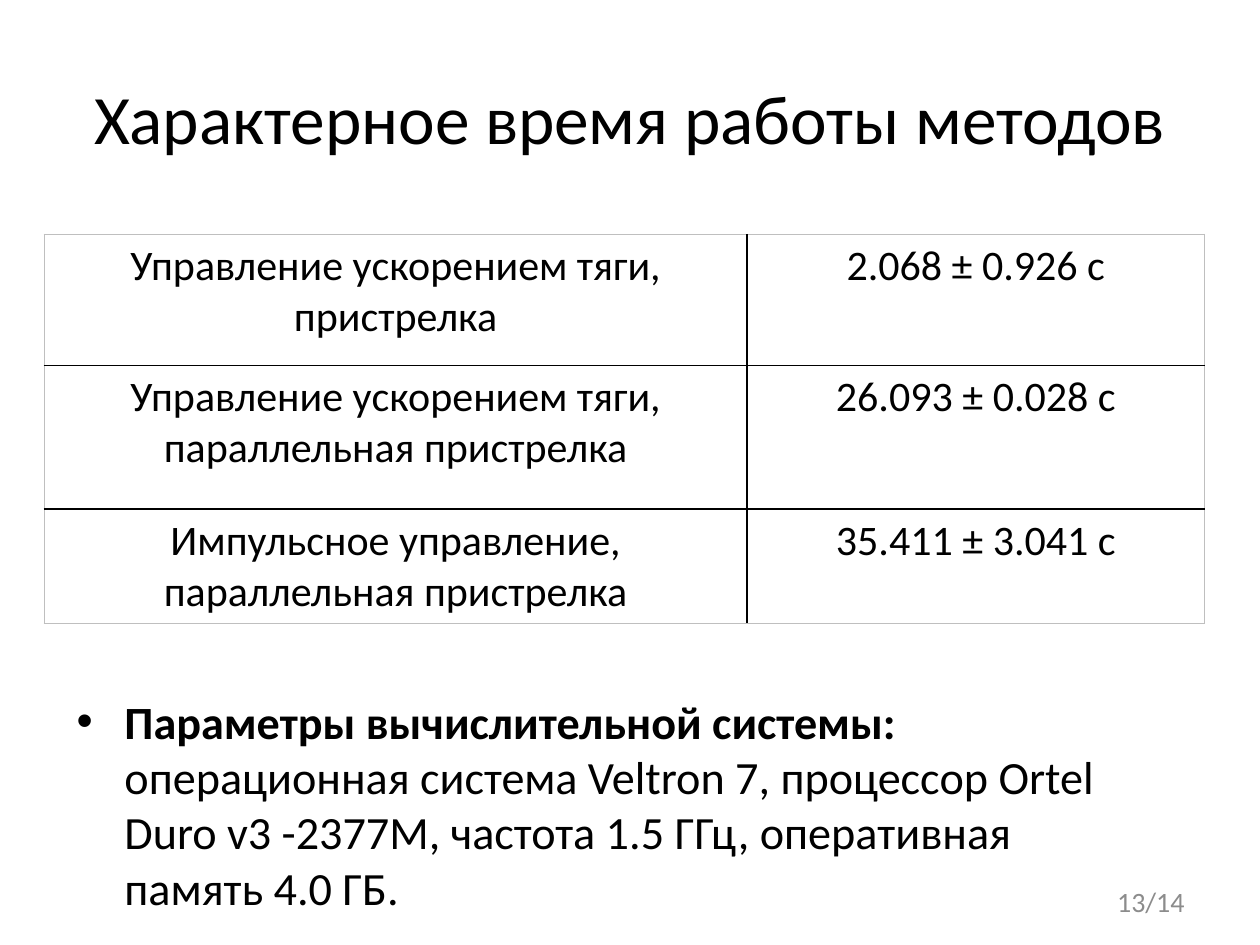
from lxml import etree
from pptx import Presentation
from pptx.dml.color import RGBColor
from pptx.enum.text import MSO_ANCHOR, PP_ALIGN
from pptx.oxml.ns import qn
from pptx.util import Inches, Pt

BLACK = RGBColor(0x00, 0x00, 0x00)
GRAY = RGBColor(0x8C, 0x8C, 0x8C)
LIGHT_GRAY = RGBColor(0xBF, 0xBF, 0xBF)
LEFT, CENTER, RIGHT = PP_ALIGN.LEFT, PP_ALIGN.CENTER, PP_ALIGN.RIGHT
TOP, MIDDLE = MSO_ANCHOR.TOP, MSO_ANCHOR.MIDDLE

TITLE = "Характерное время работы методов"
TIMINGS = [
    ("Управление ускорением тяги, пристрелка", "2.068 ± 0.926 с"),
    ("Управление ускорением тяги, параллельная пристрелка", "26.093 ± 0.028 с"),
    ("Импульсное управление, параллельная пристрелка", "35.411 ± 3.041 с"),
]
COLUMN_WIDTHS = (5.58, 3.63)
ROW_HEIGHTS = (1.04, 1.14, 0.91)
SYSTEM_LABEL = "Параметры вычислительной системы: "
SYSTEM_DETAILS = (
    "операционная система Veltron 7, процессор Ortel Duro v3 -2377M, "
    "частота 1.5 ГГц, оперативная память 4.0 ГБ."
)
PAGE_NUMBER = "13/14"


def add_run(paragraph, text, size, color=BLACK, bold=False):
    """Append a formatted run to a paragraph."""
    run = paragraph.add_run()
    run.text = text
    formats = {"name": "Calibri", "size": Pt(size), "bold": bold}
    for name, value in formats.items():
        setattr(run.font, name, value)
    run.font.color.rgb = color


def add_text_box(slide, box, alignment, anchor):
    """Add a wrapping text box and return its first paragraph."""
    frame = slide.shapes.add_textbox(*map(Inches, box)).text_frame
    for name, value in {"word_wrap": True, "vertical_anchor": anchor}.items():
        setattr(frame, name, value)
    paragraph = frame.paragraphs[0]
    paragraph.alignment = alignment
    return paragraph


def add_title(slide, box):
    """Place the centred slide title."""
    add_run(add_text_box(slide, box, CENTER, MIDDLE), TITLE, 39.6)


def set_borders(cell, borders):
    """Draw cell borders from a dict of side to colour and width."""
    properties = cell._tc.get_or_add_tcPr()
    for index, (side, (color, width)) in enumerate(borders.items()):
        line = etree.Element(qn(f"a:ln{side}"), w=str(Pt(width)))
        fill = etree.SubElement(line, qn("a:solidFill"))
        etree.SubElement(fill, qn("a:srgbClr"), val=str(color))
        properties.insert(index, line)


def add_timing_table(slide, box):
    """Place the table of methods and their running times."""
    row_count, column_count = len(TIMINGS), len(COLUMN_WIDTHS)
    frame = slide.shapes.add_table(row_count, column_count, *map(Inches, box))
    table = frame.table
    table.first_row = table.horz_banding = False
    for column, width in zip(table.columns, COLUMN_WIDTHS):
        column.width = Inches(width)
    for row, height in zip(table.rows, ROW_HEIGHTS):
        row.height = Inches(height)
    outer, inner = (LIGHT_GRAY, 0.5), (BLACK, 1)
    for row_index, texts in enumerate(TIMINGS):
        for column_index, text in enumerate(texts):
            cell = table.cell(row_index, column_index)
            cell.fill.background()
            set_borders(cell, {
                "L": inner if column_index else outer,
                "R": inner if column_index < column_count - 1 else outer,
                "T": inner if row_index else outer,
                "B": inner if row_index < row_count - 1 else outer,
            })
            paragraph = cell.text_frame.paragraphs[0]
            paragraph.alignment = CENTER
            add_run(paragraph, text, 24)


def add_system_description(slide, box):
    """Place the bulleted description of the computing system."""
    paragraph = add_text_box(slide, box, LEFT, TOP)
    paragraph.space_before = Pt(5.28)
    properties = paragraph._p.get_or_add_pPr()
    indent = Inches(0.38)
    for name, value in {"marL": indent, "indent": -indent}.items():
        properties.set(name, str(value))
    etree.SubElement(properties, qn("a:buFont"), typeface="Arial")
    etree.SubElement(properties, qn("a:buChar"), char="•")
    add_run(paragraph, SYSTEM_LABEL, 26.4, bold=True)
    add_run(paragraph, SYSTEM_DETAILS, 26.4)


def add_page_number(slide, box):
    """Place the page number."""
    add_run(add_text_box(slide, box, RIGHT, MIDDLE), PAGE_NUMBER, 16, GRAY)


def main():
    """Build and save the presentation."""
    presentation = Presentation()
    presentation.slide_width = Inches(10)
    presentation.slide_height = Inches(7.5)
    slide = presentation.slides.add_slide(presentation.slide_layouts[6])
    add_title(slide, (0.5, 0.3, 9, 1.25))
    add_timing_table(slide, (0.35, 1.86, sum(COLUMN_WIDTHS), sum(ROW_HEIGHTS)))
    add_system_description(slide, (0.51, 5.45, 8.5, 1.53))
    add_page_number(slide, (7.17, 6.95, 2.33, 0.4))
    presentation.save("out.pptx")


if __name__ == "__main__":
    main()
